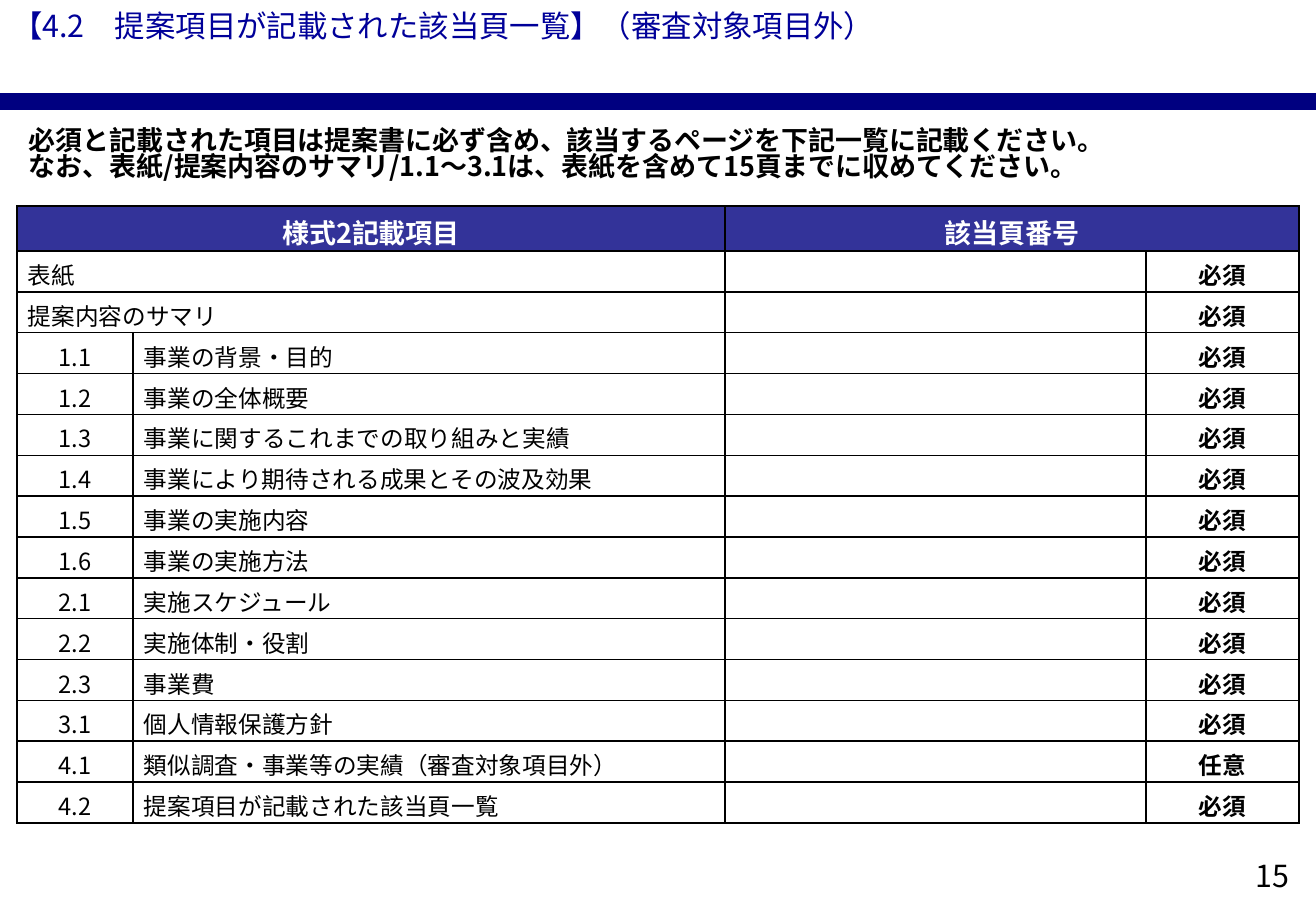
from dataclasses import dataclass

from lxml import etree
from pptx import Presentation
from pptx import util as u
from pptx.dml.color import RGBColor
from pptx.enum import shapes, text
from pptx.oxml.ns import qn

PX = 7526  # EMU in one px
SIZE = (1316, 911)
LEFT, MID = text.PP_ALIGN.LEFT, text.PP_ALIGN.CENTER


@dataclass(frozen=True)
class Theme:
    font: str = "Noto Sans CJK JP"
    ink: str = "000000"
    paper: str = "FFFFFF"
    title: str = "000099"
    bar: str = "000080"
    head: str = "333399"
    large: int = 18
    mid: int = 16
    small: int = 14


T = Theme()

TITLE = "【4.2　提案項目が記載された該当頁一覧】（審査対象項目外）"
NOTE = ("必須と記載された項目は提案書に必ず含め、該当するページを下記一覧に記載ください。\v"
        "なお、表紙/提案内容のサマリ/1.1～3.1は、表紙を含めて15頁までに収めてください。")
HEADS = ("様式2記載項目", "該当頁番号")
MUST, FREE = "必須", "任意"
ITEMS = [
    ("", "表紙", MUST),
    ("", "提案内容のサマリ", MUST),
    ("1.1", "事業の背景・目的", MUST),
    ("1.2", "事業の全体概要", MUST),
    ("1.3", "事業に関するこれまでの取り組みと実績", MUST),
    ("1.4", "事業により期待される成果とその波及効果", MUST),
    ("1.5", "事業の実施内容", MUST),
    ("1.6", "事業の実施方法", MUST),
    ("2.1", "実施スケジュール", MUST),
    ("2.2", "実施体制・役割", MUST),
    ("2.3", "事業費", MUST),
    ("3.1", "個人情報保護方針", MUST),
    ("4.1", "類似調査・事業等の実績（審査対象項目外）", FREE),
    ("4.2", "提案項目が記載された該当頁一覧", MUST),
]
COLS = (116, 592, 421, 153)
HEAD_H = 45


def emu(*px):
    return [u.Emu(round(n * PX)) for n in px]


def put(obj, **vals):
    for name, val in vals.items():
        setattr(obj, name, val)


def write(frame, words, size, color, align=LEFT, bold=False, space=None):
    frame.text = words
    for par in frame.paragraphs:
        put(par, alignment=align, line_spacing=space)
        for run in par.runs:
            put(run.font, name=T.font, size=u.Pt(size), bold=bold)
            run.font.color.rgb = RGBColor.from_string(color)
            east = etree.SubElement(run.font._element, qn("a:ea"))
            east.set("typeface", T.font)


def place(shape, box, *args, **style):
    """Set a text shape in its box and fill in its words."""
    put(shape, **dict(zip(("left", "top", "width", "height"), emu(*box))))
    side, edge = emu(12, 6)
    put(shape.text_frame, word_wrap=True, auto_size=text.MSO_AUTO_SIZE.NONE,
        vertical_anchor=text.MSO_ANCHOR.TOP, margin_left=side,
        margin_right=side, margin_top=edge, margin_bottom=edge)
    write(shape.text_frame, *args, **style)


def label(slide, box, *args, **style):
    place(slide.shapes.add_textbox(*emu(*box)), box, *args, **style)


def rule(slide, box):
    """Draw the bar along the middle of its box."""
    x, y, w, h = box
    mid = y + h / 2
    line = slide.shapes.add_connector(
        shapes.MSO_CONNECTOR.STRAIGHT, *emu(x, mid, x + w, mid))
    line.line.width = u.Emu(h * PX)
    line.line.color.rgb = RGBColor.from_string(T.bar)
    etree.SubElement(line._element.spPr, qn("a:effectLst"))


def frame(cell, fill):
    """Give a cell its borders, fill and margins."""
    side, top = emu(11, 6)
    put(cell, margin_left=side, margin_right=side, margin_top=top,
        margin_bottom=0, vertical_anchor=text.MSO_ANCHOR.TOP)
    props = cell._tc.get_or_add_tcPr()
    for tag in ("a:lnL", "a:lnR", "a:lnT", "a:lnB"):
        line = etree.SubElement(props, qn(tag), w=str(u.Pt(1)))
        solid = etree.SubElement(line, qn("a:solidFill"))
        etree.SubElement(solid, qn("a:srgbClr"), val=T.ink)
    cell.fill.solid()
    cell.fill.fore_color.rgb = RGBColor.from_string(fill)


def grid(slide, box):
    """Build the table of items and page numbers."""
    table = slide.shapes.add_table(len(ITEMS) + 1, len(COLS), *emu(*box)).table
    put(table, first_row=False, horz_banding=False)
    for col, width in zip(table.columns, emu(*COLS)):
        col.width = width
    row_h = (box[3] - HEAD_H) / len(ITEMS)
    for i, row in enumerate(table.rows):
        row.height = emu(row_h if i else HEAD_H)[0]
        for cell in row.cells:
            frame(cell, T.paper if i else T.head)
            cell.text_frame.paragraphs[0].font.size = u.Pt(T.small)

    for col, words in zip((0, 2), HEADS):
        cell = table.cell(0, col)
        cell.merge(table.cell(0, col + 1))
        write(cell.text_frame, words, T.mid, T.paper, MID, True)
    for i, (code, name, need) in enumerate(ITEMS, 1):
        first, second, _, last = table.rows[i].cells
        if code:
            write(first.text_frame, code, T.small, T.ink, MID)
        else:
            first.merge(second)
        write((second if code else first).text_frame, name, T.small, T.ink)
        write(last.text_frame, need, T.small, T.ink, MID, True)


def page(deck):
    slide = deck.slides.add_slide(deck.slide_layouts[5])
    wide = SIZE[0]
    rule(slide, (0, 93, wide, 17))
    place(slide.shapes.title, (0, 1, wide, 56), TITLE, T.large, T.title)
    label(slide, (17, 123, 1282, 76), NOTE, T.mid, T.ink, bold=True, space=0.82)
    grid(slide, (17, 206, sum(COLS), 617))
    label(slide, (1232, 851, 81, 56), "15", T.large, T.ink, align=MID)


def main():
    deck = Presentation()
    deck.slide_width, deck.slide_height = emu(*SIZE)
    page(deck)
    deck.save("out.pptx")


if __name__ == "__main__":
    main()
